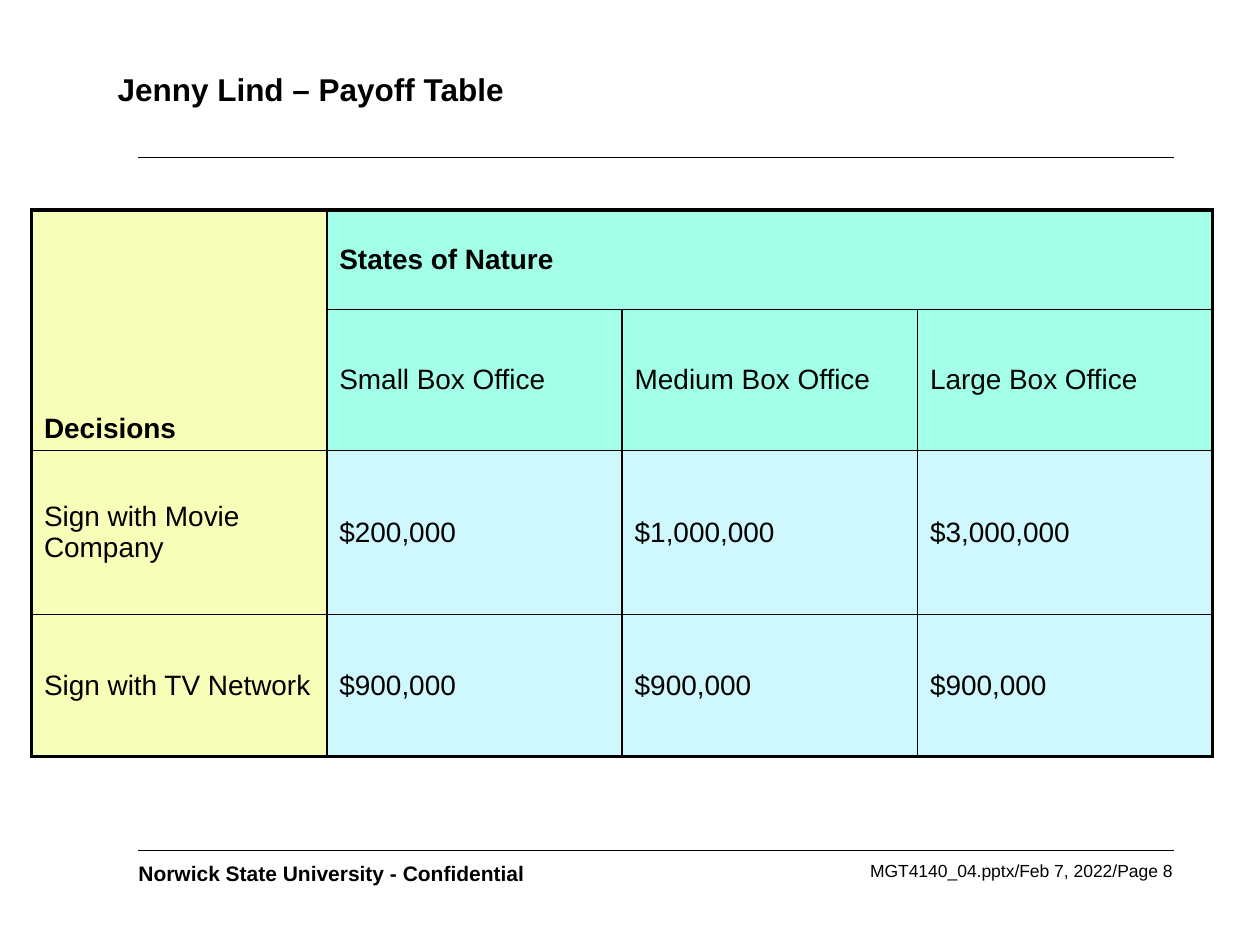
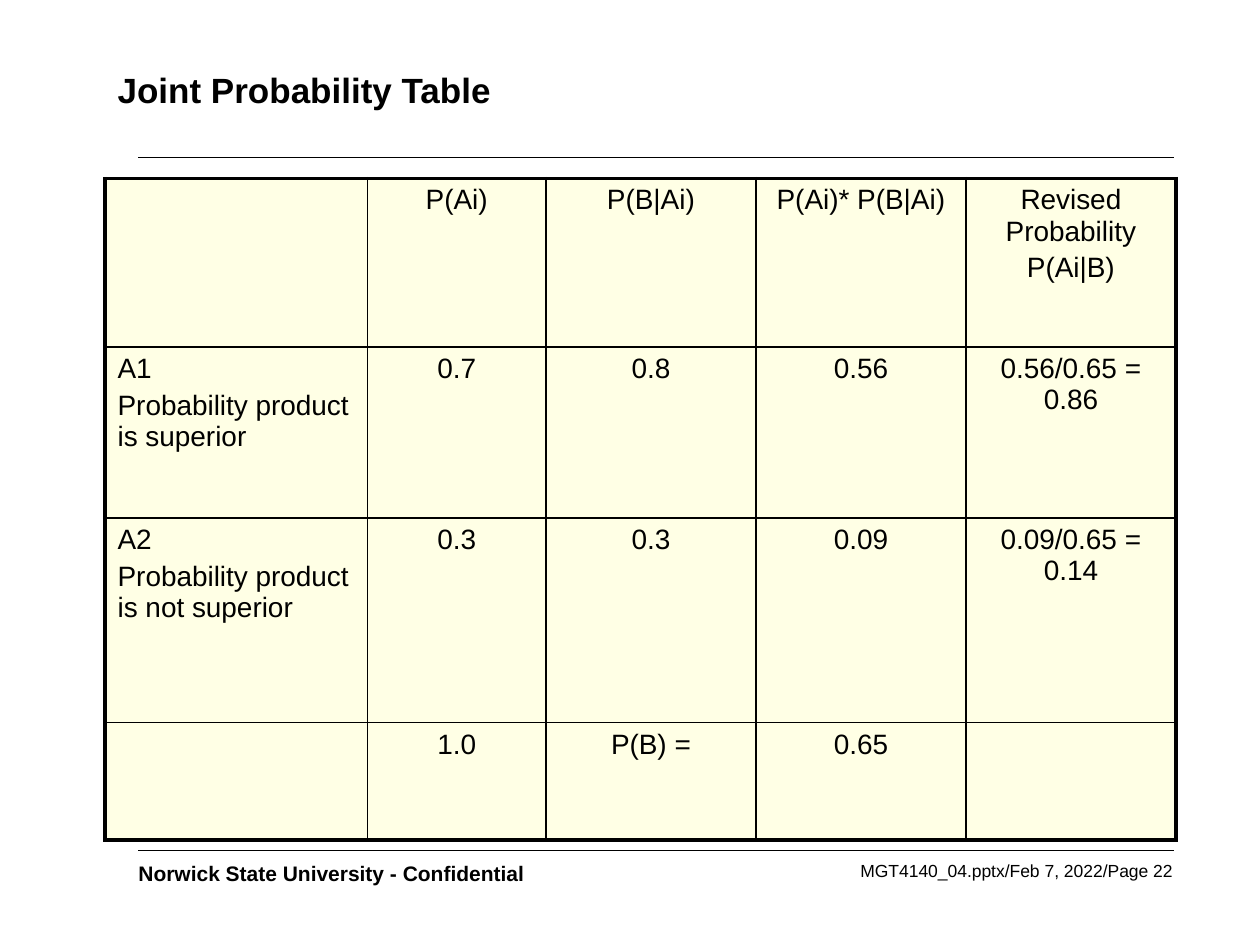
"""Build two decision-analysis table slides with a shared title, rules and footer."""
from lxml import etree
from pptx import Presentation
from pptx.dml.color import RGBColor
from pptx.enum import shapes, text
from pptx.oxml.ns import qn
from pptx.util import Pt

COLORS = {
    "ink": "000000", "paper": "FFFFFF", "decision": "F7FEB8",
    "state": "A3FFE7", "payoff": "CEF8FE", "probability": "FFFFCC",
}
FONT = "Arial"
TABLE_SIZE = 16
THIN, THICK = 1, 2.25
RULE_LEFT, RULE_RIGHT = 79, 671
RULE_TOPS = (90, 486)
FOOTER = "Norwick State University - Confidential"
PAGE_LABEL = "MGT4140_04.pptx/Feb 7, 2022/Page {}"

SLIDES = [
    {
        "title": "Jenny Lind – Payoff Table", "title_size": 18, "page": 8,
        "origin": (18, 120),
        "columns": [168.75] * 4,
        "heights": [57, 80.5, 93.75, 81],
        "rows": [
            ["Decisions", "States of Nature", "", ""],
            ["", "Small Box Office", "Medium Box Office", "Large Box Office"],
            ["Sign with Movie Company", "$200,000", "$1,000,000", "$3,000,000"],
            ["Sign with TV Network", "$900,000", "$900,000", "$900,000"],
        ],
        "fills": [["decision"] + ["state"] * 3] * 2 + [["decision"] + ["payoff"] * 3] * 2,
        "opacity": 100,
        "merges": [((0, 0), (1, 0)), ((0, 1), (0, 3))],
        "bold": {"Decisions", "States of Nature"},
        "anchor": text.MSO_ANCHOR.MIDDLE,
        "bottom_cells": {"Decisions"},
        "value_alignment": text.PP_ALIGN.LEFT,
    },
    {
        "title": "Joint Probability Table", "title_size": 20, "page": 22,
        "origin": (60, 102),
        "columns": [150, 102] + [120] * 3,
        "heights": [96.25, 97.75, 117, 67],
        "rows": [
            ["", "P(Ai)", "P(B|Ai)", "P(Ai)* P(B|Ai)", "Revised Probability\nP(Ai|B)"],
            ["A1\nProbability product is superior", "0.7", "0.8", "0.56", "0.56/0.65 = 0.86"],
            ["A2\nProbability product is not superior", "0.3", "0.3", "0.09", "0.09/0.65 = 0.14"],
            ["", "1.0", "P(B) =", "0.65", ""],
        ],
        "fills": [["probability"] * 5] * 4,
        "opacity": 50,
        "merges": [],
        "bold": set(),
        "anchor": text.MSO_ANCHOR.TOP,
        "bottom_cells": set(),
        "value_alignment": text.PP_ALIGN.CENTER,
    },
]


def color(name):
    return RGBColor.from_string(COLORS[name])


def style_paragraph(paragraph, size, bold=False, alignment=text.PP_ALIGN.LEFT):
    paragraph.alignment = alignment
    paragraph.font.name = FONT
    paragraph.font.size = Pt(size)
    paragraph.font.bold = bold
    paragraph.font.color.rgb = color("ink")


def add_footer_text(slide, box, words, size, bold, alignment):
    shape = slide.shapes.add_textbox(*map(Pt, box))
    shape.text_frame.word_wrap = True
    paragraph = shape.text_frame.paragraphs[0]
    paragraph.text = words
    style_paragraph(paragraph, size, bold, alignment)


def add_frame(slide, content):
    title = slide.shapes.title
    title.left, title.top, title.width, title.height = map(Pt, (60, 18, 612, 66))
    title.text_frame.text = content["title"]
    title.text_frame.vertical_anchor = text.MSO_ANCHOR.MIDDLE
    title.text_frame.auto_size = text.MSO_AUTO_SIZE.NONE
    style_paragraph(title.text_frame.paragraphs[0], content["title_size"], True)
    for top in RULE_TOPS:
        rule = slide.shapes.add_connector(
            shapes.MSO_CONNECTOR.STRAIGHT, Pt(RULE_LEFT), Pt(top), Pt(RULE_RIGHT), Pt(top))
        rule.line.color.rgb = color("ink")
        rule.line.width = Pt(THIN)
        etree.SubElement(rule._element.spPr, qn("a:effectLst"))
    add_footer_text(slide, (72, 488, 276, 22), FOOTER, 12, True, text.PP_ALIGN.LEFT)
    add_footer_text(slide, (402, 488, 275, 19), PAGE_LABEL.format(content["page"]),
                    10, False, text.PP_ALIGN.RIGHT)


def fill_cell(cell, name, opacity):
    cell.fill.solid()
    cell.fill.fore_color.rgb = color(name)
    if opacity < 100:
        swatch = cell._tc.tcPr.find(".//" + qn("a:srgbClr"))
        etree.SubElement(swatch, qn("a:alpha"), val=str(opacity * 1000))


def draw_borders(cell, outer_edges):
    position = 0
    for side in "LRTB":
        if cell.is_spanned and not outer_edges[side]:
            continue
        width = THICK if outer_edges[side] else THIN
        line = etree.Element(qn("a:ln" + side), w=str(Pt(width)))
        fill = etree.SubElement(line, qn("a:solidFill"))
        etree.SubElement(fill, qn("a:srgbClr"), val=COLORS["ink"])
        cell._tc.tcPr.insert(position, line)
        position += 1


def write_cell(cell, words, content, alignment):
    cell.text = words
    at_bottom = words in content["bottom_cells"]
    cell.vertical_anchor = text.MSO_ANCHOR.BOTTOM if at_bottom else content["anchor"]
    for index, paragraph in enumerate(cell.text_frame.paragraphs):
        style_paragraph(paragraph, TABLE_SIZE, words in content["bold"], alignment)
        paragraph.space_before = Pt(0.2 * TABLE_SIZE if index else 0)


def add_grid(slide, content):
    columns, heights = content["columns"], content["heights"]
    left, top = content["origin"]
    table = slide.shapes.add_table(
        len(heights), len(columns), Pt(left), Pt(top), Pt(sum(columns)), Pt(sum(heights))).table
    table.first_row = table.horz_banding = False
    for column, width in zip(table.columns, columns):
        column.width = Pt(width)
    for row, height in zip(table.rows, heights):
        row.height = Pt(height)
    for first, last in content["merges"]:
        table.cell(*first).merge(table.cell(*last))
    for r, row in enumerate(content["rows"]):
        for c, words in enumerate(row):
            cell = table.cell(r, c)
            fill_cell(cell, content["fills"][r][c], content["opacity"])
            draw_borders(cell, {
                "L": c == 0, "R": c + cell.span_width >= len(columns) if cell.is_merge_origin
                else c == len(columns) - 1,
                "T": r == 0, "B": r == len(heights) - 1})
            if words:
                alignment = content["value_alignment"] if c else text.PP_ALIGN.LEFT
                write_cell(cell, words, content, alignment)


def main():
    presentation = Presentation()
    presentation.slide_width, presentation.slide_height = Pt(720), Pt(540)
    for content in SLIDES:
        slide = presentation.slides.add_slide(presentation.slide_layouts[5])
        slide.background.fill.solid()
        slide.background.fill.fore_color.rgb = color("paper")
        add_frame(slide, content)
        add_grid(slide, content)
    presentation.save("out.pptx")


if __name__ == "__main__":
    main()
